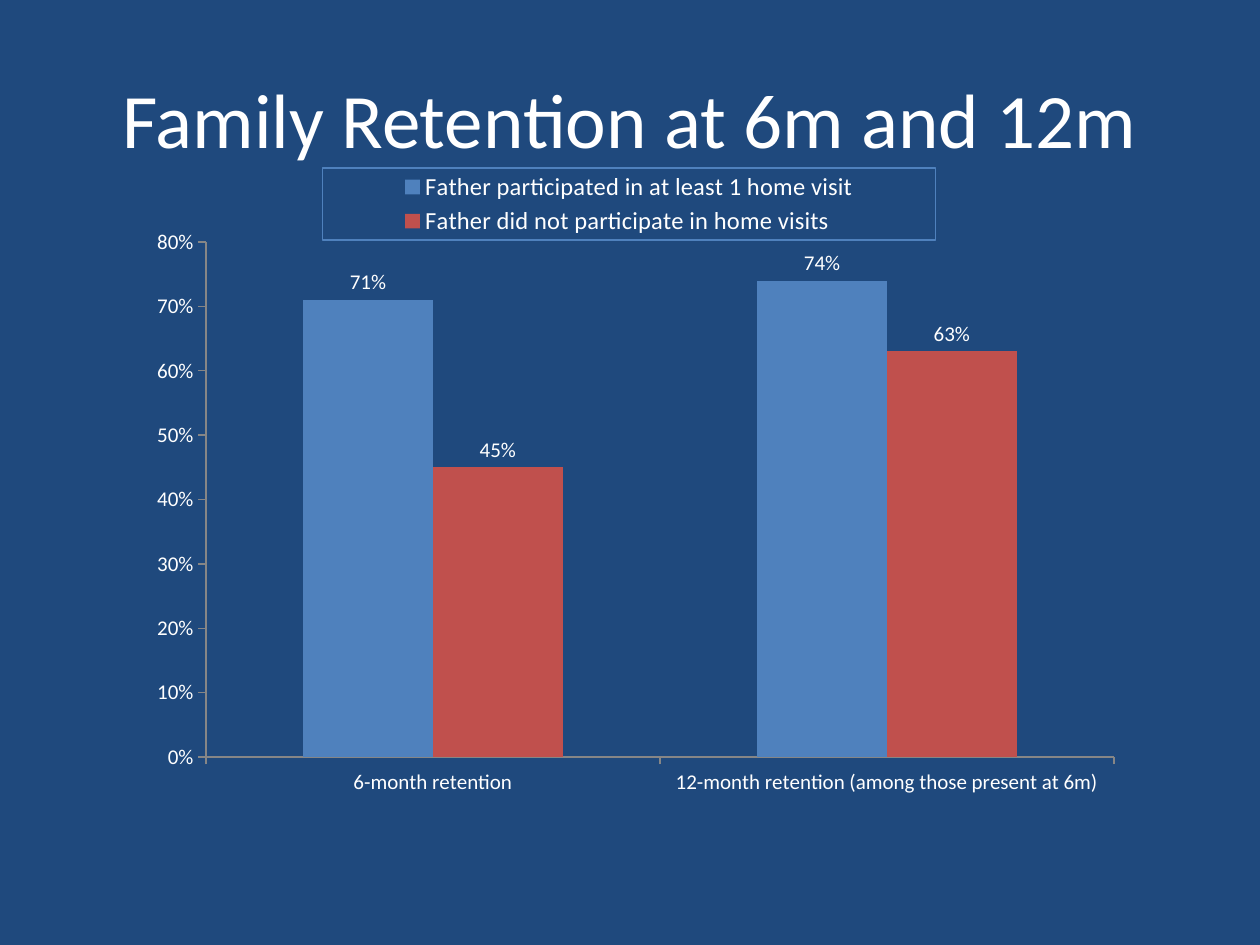
from dataclasses import dataclass

from lxml.etree import SubElement
from pptx import Presentation
from pptx.chart.data import CategoryChartData
from pptx.dml.color import RGBColor
from pptx.enum.chart import XL_CHART_TYPE, XL_LABEL_POSITION, XL_LEGEND_POSITION, XL_TICK_MARK
from pptx.enum.text import MSO_ANCHOR, PP_ALIGN
from pptx.oxml import parse_xml
from pptx.oxml.ns import nsdecls, qn
from pptx.util import Inches, Pt


@dataclass(frozen=True)
class Theme:
    """Colours, font and type sizes of the slide."""

    background: str = "1F497D"
    text: str = "FFFFFF"
    axis: str = "868686"
    border: str = "4F81BD"
    series: tuple = ("4F81BD", "C0504D")
    font: str = "Calibri"
    title_size: int = 44
    legend_size: int = 14
    label_size: int = 12


THEME = Theme()
WIDTH, HEIGHT = Inches(10), Inches(7.5)
TITLE_SHARES = (0.05, 0.04, 0.9, 0.17)
CHART_SHARES = (0.108, 0.177, 0.792, 0.677)
PLOT_SHARES = (0.07, 0.116, 0.91, 0.806)
LEGEND_SHARES = (0.187, 0, 0.614, 0.113)
PERIODS = ("6-month retention", "12-month retention (among those present at 6m)")
RETENTION = {
    "Father participated in at least 1 home visit": (0.71, 0.74),
    "Father did not participate in home visits": (0.45, 0.63),
}


def apply(target, values):
    """Set every attribute named in a dict of format values."""
    for name, value in values.items():
        setattr(target, name, value)


def style_font(font, size):
    """Give a font the theme's face and text colour."""
    apply(font, {"name": THEME.font, "size": Pt(size), "bold": False})
    font.color.rgb = RGBColor.from_string(THEME.text)


def paint(fill, color):
    """Make a fill solid in one colour."""
    fill.solid()
    fill.fore_color.rgb = RGBColor.from_string(color)


def frame(shares):
    """Turn shares of the slide into left, top, width and height."""
    return [int(share * side) for share, side in zip(shares, (WIDTH, HEIGHT) * 2)]


def manual_layout(shares, inner=False):
    """Return a layout element placed by shares of the chart."""
    layout = parse_xml(f"<c:layout {nsdecls('c')}><c:manualLayout/></c:layout>")
    settings = [("layoutTarget", "inner")] if inner else []
    settings += [("xMode", "edge"), ("yMode", "edge"), *zip("xywh", shares)]
    for name, value in settings:
        SubElement(layout[0], qn(f"c:{name}"), val=str(value))
    return layout


def set_title(slide, text):
    """Place and format the title placeholder."""
    title = slide.shapes.title
    apply(title, dict(zip(("left", "top", "width", "height"), frame(TITLE_SHARES))))
    apply(title.text_frame, {"text": text, "vertical_anchor": MSO_ANCHOR.MIDDLE, "word_wrap": True})
    para = title.text_frame.paragraphs[0]
    para.alignment = PP_ALIGN.CENTER
    style_font(para.runs[0].font, THEME.title_size)


def style_axis(axis):
    """Format an axis line, its ticks and its labels."""
    apply(axis, {
        "has_major_gridlines": False,
        "major_tick_mark": XL_TICK_MARK.OUTSIDE,
        "minor_tick_mark": XL_TICK_MARK.NONE,
    })
    paint(axis.format.line.fill, THEME.axis)
    axis.format.line.width = Pt(0.75)
    style_font(axis.tick_labels.font, THEME.label_size)


def style_series(series, color):
    """Colour a series and label its columns."""
    paint(series.format.fill, color)
    series.invert_if_negative = False
    labels = series.data_labels
    apply(labels, {
        "show_value": True,
        "number_format": "0%",
        "number_format_is_linked": False,
        "position": XL_LABEL_POSITION.OUTSIDE_END,
    })
    style_font(labels.font, THEME.label_size)


def style_legend(chart):
    """Place the bordered legend above the columns."""
    chart.has_legend = True
    legend = chart.legend
    apply(legend, {"position": XL_LEGEND_POSITION.TOP, "include_in_layout": False})
    style_font(legend.font, THEME.legend_size)
    element = legend._element
    for old in element.findall(qn("c:layout")):
        element.remove(old)
    element.find(qn("c:legendPos")).addnext(manual_layout(LEGEND_SHARES))
    element.find(qn("c:txPr")).addprevious(parse_xml(
        f'<c:spPr {nsdecls("c", "a")}><a:ln w="9525"><a:solidFill>'
        f'<a:srgbClr val="{THEME.border}"/></a:solidFill></a:ln></c:spPr>'
    ))


def add_retention_chart(slide):
    """Add the clustered column chart of retention."""
    data = CategoryChartData(number_format="0%")
    data.categories = PERIODS
    for name, values in RETENTION.items():
        data.add_series(name, values)
    chart = slide.shapes.add_chart(XL_CHART_TYPE.COLUMN_CLUSTERED, *frame(CHART_SHARES), data).chart
    chart.has_title = False
    style_font(chart.font, THEME.label_size)
    plot = chart.plots[0]
    apply(plot, {"gap_width": 150, "overlap": 0, "vary_by_categories": False})
    for series, color in zip(plot.series, THEME.series):
        style_series(series, color)
    for axis in (chart.category_axis, chart.value_axis):
        style_axis(axis)
    apply(chart.value_axis, {"minimum_scale": 0, "maximum_scale": 0.8, "major_unit": 0.1})
    apply(chart.value_axis.tick_labels, {"number_format": "0%", "number_format_is_linked": False})
    style_legend(chart)
    area = chart._chartSpace.chart.plotArea
    for old in area.findall(qn("c:layout")):
        area.remove(old)
    area.insert(0, manual_layout(PLOT_SHARES, inner=True))


def main():
    """Build and save the deck."""
    deck = Presentation()
    apply(deck, {"slide_width": WIDTH, "slide_height": HEIGHT})
    slide = deck.slides.add_slide(deck.slide_layouts[5])
    paint(slide.background.fill, THEME.background)
    set_title(slide, "Family Retention at 6m and 12m")
    add_retention_chart(slide)
    deck.save("out.pptx")


if __name__ == "__main__":
    main()
